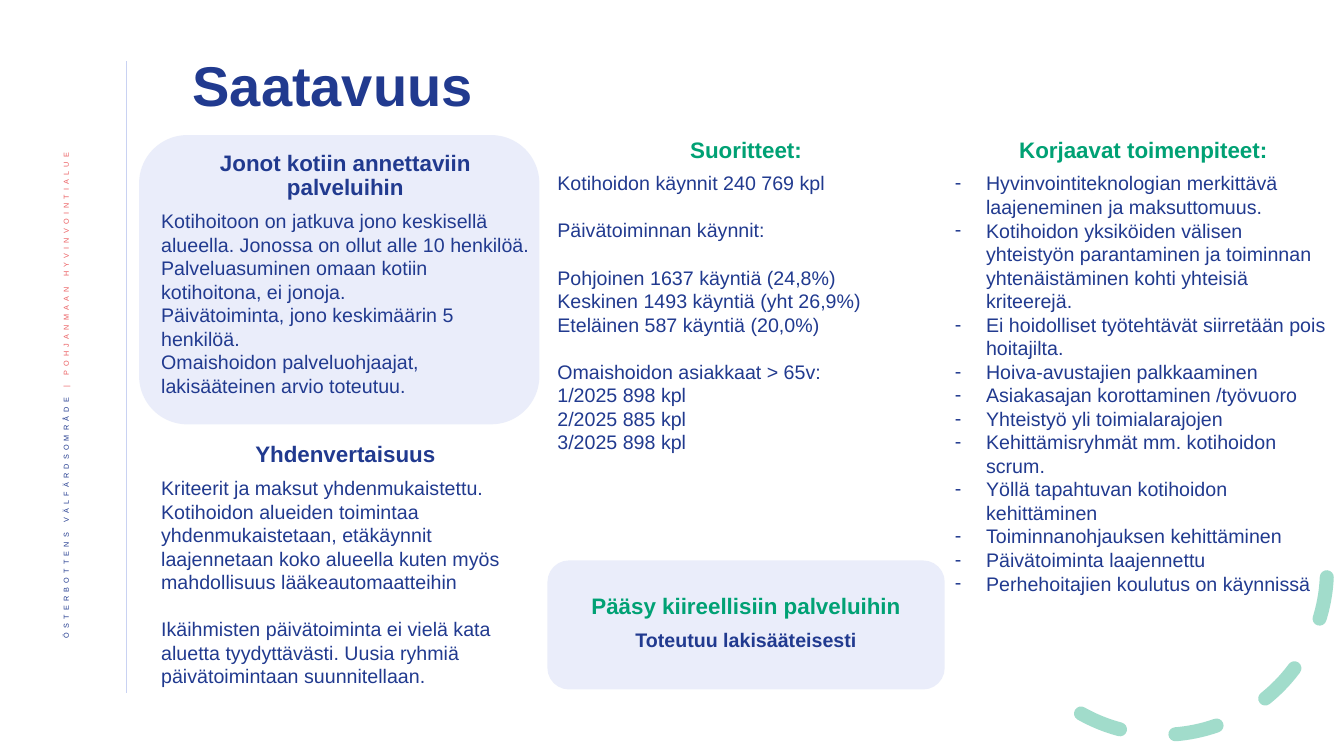
from lxml import etree
from pptx import Presentation
from pptx import util as u
from pptx.dml.color import RGBColor
from pptx.enum import shapes, text
from pptx.oxml import ns

NAVY = RGBColor(0x21, 0x3A, 0x8F)
GREEN = RGBColor(0x00, 0xA1, 0x74)
CORAL = RGBColor(0xEB, 0x5C, 0x5F)
LILAC = RGBColor(0xC9, 0xD2, 0xF2)
FONT = "Arial"
BLANK_LINE = u.Pt(16.8)

QUEUES = [[
    "Kotihoitoon on jatkuva jono keskisellä alueella. Jonossa on ollut alle 10 henkilöä.",
    "Palveluasuminen omaan kotiin kotihoitona, ei jonoja.",
    "Päivätoiminta, jono keskimäärin 5 henkilöä.",
    "Omaishoidon palveluohjaajat, lakisääteinen arvio toteutuu.",
]]
EQUALITY = [
    ["Kriteerit ja maksut yhdenmukaistettu. Kotihoidon alueiden toimintaa "
     "yhdenmukaistetaan, etäkäynnit laajennetaan koko alueella kuten myös "
     "mahdollisuus lääkeautomaatteihin"],
    ["Ikäihmisten päivätoiminta ei vielä kata aluetta tyydyttävästi. "
     "Uusia ryhmiä päivätoimintaan suunnitellaan."],
]
OUTPUTS = [
    ["Kotihoidon käynnit 240 769 kpl"],
    ["Päivätoiminnan käynnit:"],
    ["Pohjoinen 1637 käyntiä (24,8%)",
     "Keskinen 1493 käyntiä (yht 26,9%)",
     "Eteläinen 587 käyntiä (20,0%)"],
    ["Omaishoidon asiakkaat > 65v:",
     "1/2025 898 kpl", "2/2025 885 kpl", "3/2025 898 kpl"],
]
ACTIONS = [[
    "Hyvinvointiteknologian merkittävä laajeneminen ja maksuttomuus.",
    "Kotihoidon yksiköiden välisen yhteistyön parantaminen ja toiminnan "
    "yhtenäistäminen kohti yhteisiä kriteerejä.",
    "Ei hoidolliset työtehtävät siirretään pois hoitajilta.",
    "Hoiva-avustajien palkkaaminen",
    "Asiakasajan korottaminen /työvuoro",
    "Yhteistyö yli toimialarajojen",
    "Kehittämisryhmät mm. kotihoidon scrum.",
    "Yöllä tapahtuvan kotihoidon kehittäminen",
    "Toiminnanohjauksen kehittäminen",
    "Päivätoiminta laajennettu",
    "Perhehoitajien koulutus on käynnissä",
]]


def place(sp, *at):
    sp.left, sp.top, sp.width, sp.height = map(u.Inches, at)


def add_run(p, words, size, color, bold=False):
    r = p.add_run()
    r.text = words
    r.font.name = FONT
    r.font.size = u.Pt(size)
    r.font.bold = bold
    r.font.color.rgb = color
    return r


def set_bullet(p, char=None):
    pPr = p._p.get_or_add_pPr()
    indent = u.Inches(0.31) if char else 0
    pPr.set("marL", str(indent))
    pPr.set("indent", str(-indent))
    bu = etree.SubElement(pPr, ns.qn("a:buChar" if char else "a:buNone"))
    if char:
        bu.set("char", char)


def set_alpha(fill_parent, percent):
    clr = fill_parent.find(".//" + ns.qn("a:srgbClr"))
    etree.SubElement(clr, ns.qn("a:alpha")).set("val", str(percent * 1000))


def add_textbox(s, *at):
    return s.shapes.add_textbox(*map(u.Inches, at))


def fill_section(sp, heading, groups, color=GREEN, spacing=1.0,
                 bullet=None, centered_bold=False):
    tf = sp.text_frame
    tf.word_wrap = True
    tf.auto_size = text.MSO_AUTO_SIZE.SHAPE_TO_FIT_TEXT
    p = tf.paragraphs[0]
    set_bullet(p)
    p.alignment = text.PP_ALIGN.CENTER
    p.line_spacing = spacing
    p.space_before, p.space_after = u.Pt(0), u.Pt(6)
    add_run(p, heading, 16, color, True)
    for g, group in enumerate(groups):
        for i, words in enumerate(group):
            p = tf.add_paragraph()
            set_bullet(p, bullet)
            p.alignment = text.PP_ALIGN.CENTER if centered_bold else text.PP_ALIGN.LEFT
            p.space_before = BLANK_LINE if g and not i else u.Pt(0)
            add_run(p, words, 14, NAVY, centered_bold)


def add_panel(s, *at):
    sp = s.shapes.add_shape(shapes.MSO_SHAPE.ROUNDED_RECTANGLE, *map(u.Inches, at))
    sp.shadow.inherit = False
    sp.fill.solid()
    sp.fill.fore_color.rgb = LILAC
    set_alpha(sp._element.spPr, 38)
    sp.line.fill.background()


def add_margin_rule(s):
    x = u.Inches(1.25)
    line = s.shapes.add_connector(shapes.MSO_CONNECTOR.STRAIGHT,
                                  x, u.Inches(0.61), x, u.Inches(6.88))
    line.line.color.rgb = LILAC
    line.line.width = u.Pt(0.5)
    etree.SubElement(line._element.spPr, ns.qn("a:effectLst"))


def add_side_label(s):
    tf = add_textbox(s, 0.42, 1.42, 0.52, 5.73).text_frame
    tf.word_wrap = True
    tf.vertical_anchor = text.MSO_ANCHOR.MIDDLE
    tf._txBody.bodyPr.set("vert", "vert270")
    p = tf.paragraphs[0]
    p.alignment = text.PP_ALIGN.RIGHT
    p.line_spacing = 0.9
    for words, color in (("ÖSTERBOTTENS VÄLFÄRDSOMRÅDE ", NAVY),
                         ("| POHJANMAAN HYVINVOINTIALUE", CORAL)):
        rPr = add_run(p, words, 9, color)._r.get_or_add_rPr()
        rPr.set("baseline", "30000")
        rPr.set("spc", "300")


def add_dashed_arc(s):
    arc = s.shapes.add_shape(shapes.MSO_SHAPE.ARC, *map(u.Inches, (9.89, 4.02, 3.27, 3.27)))
    arc.shadow.inherit = False
    arc.adjustments[0], arc.adjustments[1] = 158.17, 17.81
    arc.rotation = 98.9
    arc.fill.background()
    arc.line.color.rgb = GREEN
    arc.line.width = u.Pt(10)
    ln = arc.line._get_or_add_ln()
    ln.set("cap", "rnd")
    set_alpha(ln, 36)
    etree.SubElement(ln, ns.qn("a:prstDash")).set("val", "dash")


def set_title(sp, words):
    place(sp, 1.81, 0.45, 10.2, 0.85)
    tf = sp.text_frame
    tf.vertical_anchor = text.MSO_ANCHOR.MIDDLE
    p = tf.paragraphs[0]
    p.alignment = text.PP_ALIGN.LEFT
    p.line_spacing = 0.9
    add_run(p, words, 40, NAVY, True)


def main():
    prs = Presentation()
    prs.slide_width, prs.slide_height = u.Inches(13.33), u.Inches(7.5)
    s = prs.slides.add_slide(prs.slide_layouts[1])
    add_margin_rule(s)
    add_side_label(s)
    add_dashed_arc(s)
    set_title(s.shapes.title, "Saatavuus")

    add_panel(s, 1.38, 1.34, 3.97, 2.87)
    fill_section(add_textbox(s, 1.5, 1.46, 3.85, 2.55),
                 "Jonot kotiin annettaviin palveluihin", QUEUES, NAVY, 0.9)
    fill_section(add_textbox(s, 1.5, 4.35, 3.85, 2.55),
                 "Yhdenvertaisuus", EQUALITY, NAVY, 0.9)

    fill_section(add_textbox(s, 5.43, 1.3, 3.94, 3.28), "Suoritteet:", OUTPUTS)
    add_panel(s, 5.43, 5.56, 3.94, 1.28)
    fill_section(add_textbox(s, 5.43, 5.83, 3.94, 0.69), "Pääsy kiireellisiin palveluihin",
                 [["Toteutuu lakisääteisesti"]], centered_bold=True)

    actions = s.placeholders[1]
    place(actions, 9.37, 1.3, 3.94, 4.7)
    fill_section(actions, "Korjaavat toimenpiteet:", ACTIONS, bullet="-")
    prs.save("out.pptx")


if __name__ == "__main__":
    main()
